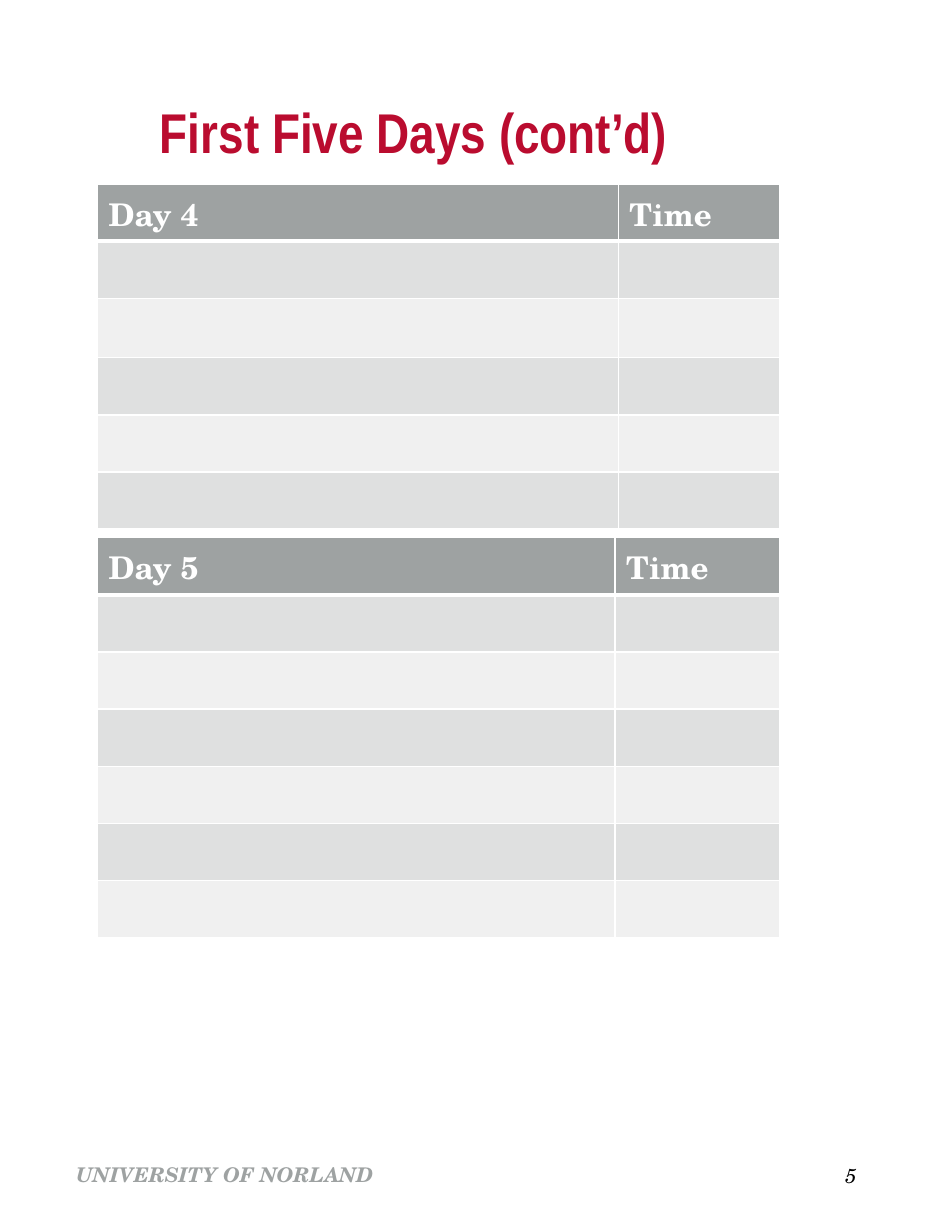
from lxml.etree import SubElement
from pptx import Presentation
from pptx.dml.color import RGBColor
from pptx.enum.text import MSO_ANCHOR, PP_ALIGN
from pptx.oxml.ns import qn
from pptx.util import Inches, Pt

PAGE_WIDTH, PAGE_HEIGHT = Inches(8.5), Inches(11)
RED = RGBColor(0xBA, 0x0C, 0x2F)
GRAY = RGBColor(0x9E, 0xA2, 0xA2)
BAND_DARK = RGBColor(0xDF, 0xE0, 0xE0)
BAND_LIGHT = RGBColor(0xF0, 0xF0, 0xF0)
WHITE = RGBColor(0xFF, 0xFF, 0xFF)
BLACK = RGBColor(0, 0, 0)
SERIF = "TeX Gyre Schola"
NARROW = "Arial Narrow"


def page_box(left, top, width, height):
    """Turn percentages of the page into a box of lengths."""
    return (int(PAGE_WIDTH * left / 100), int(PAGE_HEIGHT * top / 100),
            int(PAGE_WIDTH * width / 100), int(PAGE_HEIGHT * height / 100))


def write_text(text_frame, text, size, color, font=SERIF, bold=False, italic=False,
               align=PP_ALIGN.LEFT, line_spacing=None):
    """Write one formatted paragraph into a text frame."""
    paragraph = text_frame.paragraphs[0]
    paragraph.alignment = align
    paragraph.line_spacing = line_spacing
    run = paragraph.add_run()
    run.text = text
    run.font.name = font
    run.font.size = Pt(size)
    run.font.bold = bold
    run.font.italic = italic
    run.font.color.rgb = color


def add_text(slide, box, text, anchor=MSO_ANCHOR.TOP, wrap=True, **text_format):
    """Place a text box in the given box."""
    text_frame = slide.shapes.add_textbox(*box).text_frame
    text_frame.word_wrap = wrap
    text_frame.vertical_anchor = anchor
    write_text(text_frame, text, **text_format)


def set_borders(cell, bottom_width):
    """Draw white borders around a cell, before its fill is set."""
    properties = cell._tc.get_or_add_tcPr()
    for side, width in (("L", 1), ("R", 1), ("T", 1), ("B", bottom_width)):
        line = SubElement(properties, qn(f"a:ln{side}"), w=str(Pt(width)))
        fill = SubElement(line, qn("a:solidFill"))
        SubElement(fill, qn("a:srgbClr"), val=str(WHITE))


def add_day_table(slide, box, day, column_shares, row_shares):
    """Place a day's empty schedule, divided by column and row shares."""
    left, top, width, height = box
    table = slide.shapes.add_table(len(row_shares), len(column_shares), *box).table
    for column, share in zip(table.columns, column_shares):
        column.width = int(width * share / sum(column_shares))
    for row_number, (row, share) in enumerate(zip(table.rows, row_shares)):
        row.height = int(height * share / sum(row_shares))
        band = BAND_DARK if row_number % 2 else BAND_LIGHT
        for cell in row.cells:
            set_borders(cell, 1 if row_number else 3)
            cell.fill.solid()
            cell.fill.fore_color.rgb = band if row_number else GRAY
    for cell, heading in zip(table.rows[0].cells, (day, "Time")):
        write_text(cell.text_frame, heading, size=20.1, color=WHITE, bold=True)


def add_footer(slide, name_box, number_box):
    """Place the institution name and the page number."""
    add_text(slide, name_box, "UNIVERSITY OF NORLAND", size=13, color=GRAY,
             bold=True, italic=True)
    add_text(slide, number_box, "5", wrap=False, size=13, color=BLACK, italic=True)


def main():
    """Build the schedule page and save it."""
    presentation = Presentation()
    presentation.slide_width, presentation.slide_height = PAGE_WIDTH, PAGE_HEIGHT
    slide = presentation.slides.add_slide(presentation.slide_layouts[6])
    add_footer(slide, page_box(6.82, 93.91, 33.76, 4.91), page_box(87.65, 94, 5.53, 2.91))
    add_text(slide, page_box(12.94, 8.55, 61.06, 5), "First Five Days (cont’d)",
             anchor=MSO_ANCHOR.MIDDLE, size=36, color=RED, font=NARROW, bold=True,
             align=PP_ALIGN.CENTER, line_spacing=0.84)
    add_day_table(slide, page_box(10.24, 14.95, 71.65, 28), "Day 4",
                  (4.65, 1.44), (0.51, 0.51, 0.53, 0.51, 0.51, 0.51))
    add_day_table(slide, page_box(10.24, 43.64, 71.65, 32.47), "Day 5",
                  (4.62, 1.47), (1,) * 7)
    presentation.save("out.pptx")


if __name__ == "__main__":
    main()
